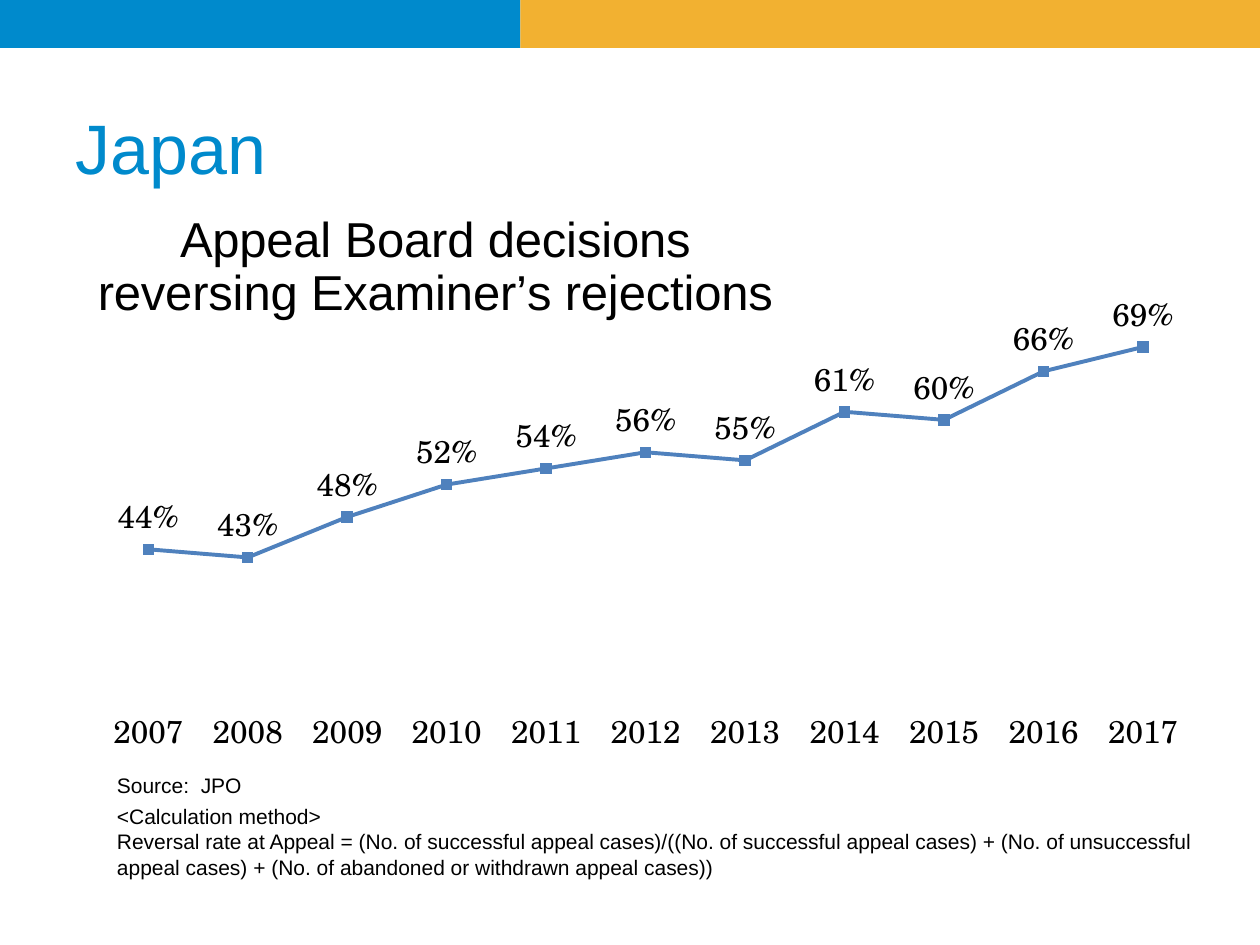
"""Build a slide with a line chart of Japanese appeal reversal rates."""
from lxml.etree import SubElement
from pptx import Presentation
from pptx.chart.data import CategoryChartData
from pptx.dml.color import RGBColor
from pptx.enum.chart import XL_CHART_TYPE, XL_LABEL_POSITION, XL_MARKER_STYLE, XL_TICK_MARK
from pptx.enum.shapes import MSO_SHAPE
from pptx.enum.text import MSO_ANCHOR, PP_ALIGN
from pptx.oxml.ns import qn
from pptx.util import Inches, Pt

COLORS = {name: RGBColor.from_string(value) for name, value in {
    "blue": "008ACC", "amber": "F2B131", "line": "4F81BD", "text": "000000"}.items()}

presentation = Presentation()
presentation.slide_width, presentation.slide_height = Inches(10), Inches(7.5)
column = presentation.slide_width / 100
row = presentation.slide_height / 75
slide = presentation.slides.add_slide(presentation.slide_layouts[6])


def place(left, top, width, height):
    return [int(left * column), int(top * row), int(width * column), int(height * row)]


def set_layout(parent, index, **settings):
    for old_layout in parent.findall(qn("c:layout")):
        parent.remove(old_layout)
    layout = SubElement(parent, qn("c:layout"))
    manual = SubElement(layout, qn("c:manualLayout"))
    for name, value in settings.items():
        SubElement(manual, qn(f"c:{name}")).set("val", str(value))
    parent.insert(index, layout)


split = 41.3
for left, width, color in [(0, split, "blue"), (split, 100 - split, "amber")]:
    band = slide.shapes.add_shape(MSO_SHAPE.RECTANGLE, *place(left, 0, width, 3.8))
    band.shadow.inherit = False
    band.fill.solid()
    band.fill.fore_color.rgb = COLORS[color]
    band.line.fill.background()

rates = [0.44, 0.43, 0.48, 0.52, 0.54, 0.56, 0.55, 0.61, 0.6, 0.66, 0.69]
chart_data = CategoryChartData(number_format="0%")
chart_data.categories = [str(2007 + offset) for offset in range(len(rates))]
chart_data.add_series("Series 1", rates)
chart = slide.shapes.add_chart(
    XL_CHART_TYPE.LINE_MARKERS, *place(4.7, 12.9, 91.9, 50.9), chart_data).chart
chart.has_legend = False
chart.font.size = Pt(18)
chart.font.name = "TeX Gyre Schola"
chart.font.color.rgb = COLORS["text"]

chart.has_title = True
chart_title = chart.chart_title
chart_title.text_frame.text = "Appeal Board decisions\nreversing Examiner’s rejections"
for paragraph in chart_title.text_frame.paragraphs:
    paragraph.alignment = PP_ALIGN.CENTER
    paragraph.font.size = Pt(28)
    paragraph.font.bold = False
    paragraph.font.name = "Arial"
    paragraph.font.color.rgb = COLORS["text"]
chart_title.include_in_layout = True
set_layout(chart_title._element, 1, xMode="edge", yMode="edge", x=0.03, y=0.07)
set_layout(chart._chartSpace.chart.plotArea, 0, layoutTarget="inner", xMode="edge",
           yMode="edge", x=0.034, y=0.212, w=0.945, h=0.631)

category_axis = chart.category_axis
category_axis.major_tick_mark = XL_TICK_MARK.NONE
category_axis.format.line.fill.background()
value_axis = chart.value_axis
value_axis.minimum_scale, value_axis.maximum_scale = 0.25, 0.75
value_axis.has_major_gridlines = False
value_axis.visible = False

plot = chart.plots[0]
plot.vary_by_categories = False
series = plot.series[0]
series.smooth = False
series.format.line.width = Pt(2.25)
series.format.line.color.rgb = COLORS["line"]
series.marker.style = XL_MARKER_STYLE.SQUARE
series.marker.size = 6
series.marker.format.fill.solid()
series.marker.format.fill.fore_color.rgb = COLORS["line"]
series.marker.format.line.color.rgb = COLORS["line"]
labels = series.data_labels
labels.show_value = True
labels.position = XL_LABEL_POSITION.ABOVE
labels.number_format = "0%"
labels.number_format_is_linked = False

texts = [
    ("Japan", (5, 5.8, 90, 11.7), 40, "blue", MSO_ANCHOR.MIDDLE),
    ("Source:  JPO", (8.3, 60.8, 13.4, 3), 12, "text", MSO_ANCHOR.TOP),
    ("<Calculation method>\nReversal rate at Appeal = (No. of successful appeal cases)/"
     "((No. of successful appeal cases) + (No. of unsuccessful appeal cases) + "
     "(No. of abandoned or withdrawn appeal cases))",
     (8.3, 63.3, 89.2, 7.1), 12, "text", MSO_ANCHOR.TOP),
]
for text, area, size, color, anchor in texts:
    frame = slide.shapes.add_textbox(*place(*area)).text_frame
    frame.word_wrap = True
    frame.vertical_anchor = anchor
    frame.text = text
    for paragraph in frame.paragraphs:
        paragraph.font.size = Pt(size)
        paragraph.font.name = "Arial"
        paragraph.font.color.rgb = COLORS[color]

presentation.save("out.pptx")
